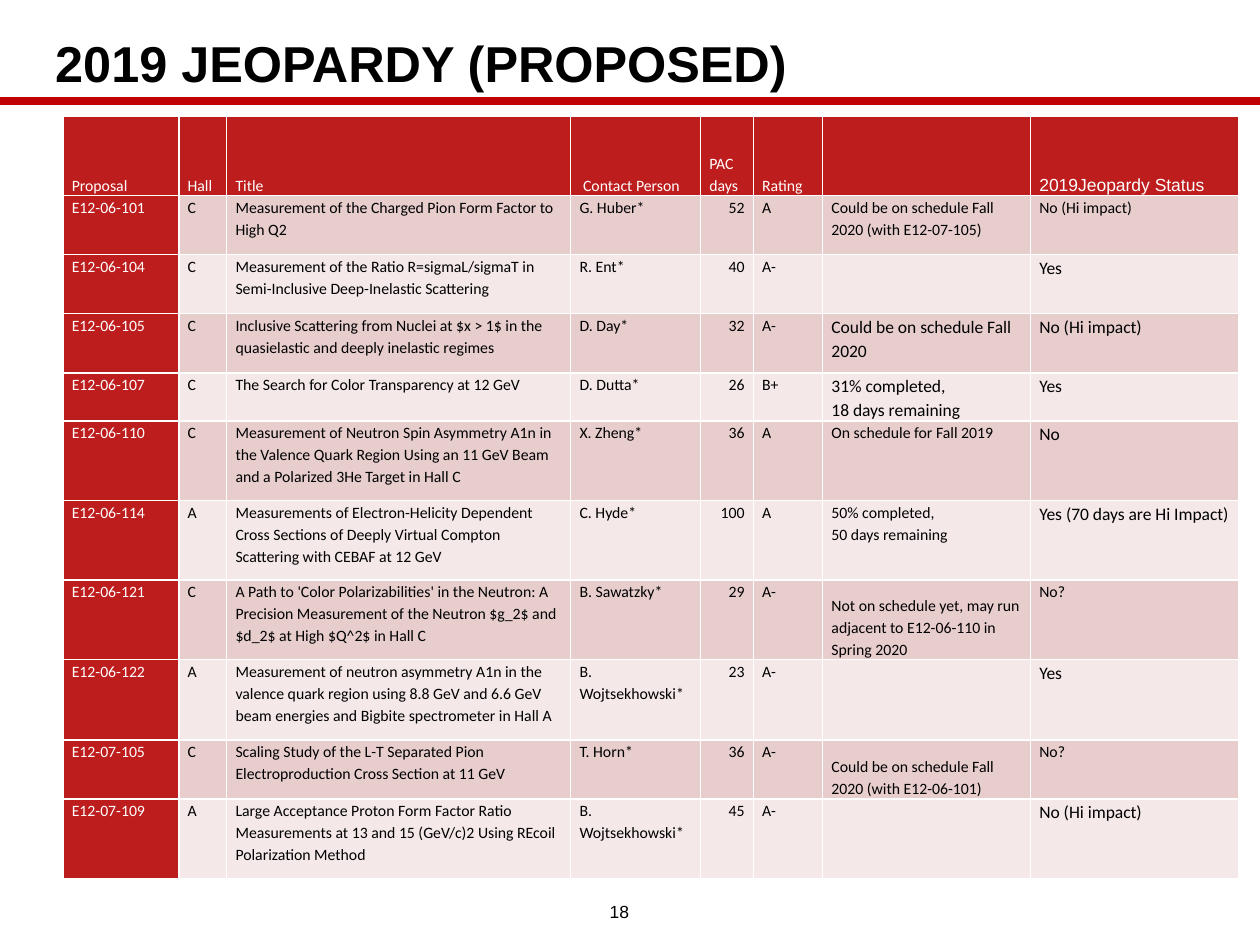
"""Build the 2019 jeopardy proposals table slide."""
from lxml import etree
from pptx import Presentation
from pptx.dml.color import RGBColor
from pptx.enum.shapes import MSO_CONNECTOR
from pptx.enum.text import MSO_ANCHOR, PP_ALIGN
from pptx.oxml.ns import qn
from pptx.util import Inches, Pt

STRAIGHT = MSO_CONNECTOR.STRAIGHT
TOP, MIDDLE, BOTTOM = MSO_ANCHOR.TOP, MSO_ANCHOR.MIDDLE, MSO_ANCHOR.BOTTOM
LEFT, CENTER, RIGHT = PP_ALIGN.LEFT, PP_ALIGN.CENTER, PP_ALIGN.RIGHT

BLACK = RGBColor(0x00, 0x00, 0x00)
WHITE = RGBColor(0xFF, 0xFF, 0xFF)
RULE_RED = RGBColor(0xC0, 0x00, 0x00)
HEADER_RED = RGBColor(0xBE, 0x1D, 0x1D)
BAND_DARK = RGBColor(0xE8, 0xCD, 0xCD)
BAND_LIGHT = RGBColor(0xF4, 0xE8, 0xE8)

TITLE = "2019 JEOPARDY (PROPOSED)"
PAGE_NUMBER = "18"
ROWS = [
    ("Proposal", "Hall", "Title", " Contact Person", "PAC days", "Rating", "",
     "2019Jeopardy Status"),
    ("E12-06-101", "C", "Measurement of the Charged Pion Form Factor to High Q2",
     "G. Huber*", "52", "A", "Could be on schedule Fall 2020 (with E12-07-105)",
     "No (Hi impact)"),
    ("E12-06-104", "C",
     "Measurement of the Ratio R=sigmaL/sigmaT in Semi-Inclusive Deep-Inelastic Scattering",
     "R. Ent*", "40", "A-", "", "Yes"),
    ("E12-06-105", "C",
     "Inclusive Scattering from Nuclei at $x > 1$ in the quasielastic and deeply "
     "inelastic regimes",
     "D. Day*", "32", "A-", "Could be on schedule Fall 2020", "No (Hi impact)"),
    ("E12-06-107", "C", "The Search for Color Transparency at 12 GeV",
     "D. Dutta*", "26", "B+", "31% completed,\n18 days remaining", "Yes"),
    ("E12-06-110", "C",
     "Measurement of Neutron Spin Asymmetry A1n in the Valence Quark Region Using "
     "an 11 GeV Beam and a Polarized 3He Target in Hall C",
     "X. Zheng*", "36", "A", "On schedule for Fall 2019", "No"),
    ("E12-06-114", "A",
     "Measurements of Electron-Helicity Dependent Cross Sections of Deeply Virtual "
     "Compton Scattering with CEBAF at 12 GeV",
     "C. Hyde*", "100", "A", "50% completed,\n50 days remaining",
     "Yes (70 days are Hi Impact)"),
    ("E12-06-121", "C",
     "A Path to 'Color Polarizabilities' in the Neutron: A Precision Measurement of "
     "the Neutron $g_2$ and $d_2$ at High $Q^2$ in Hall C",
     "B. Sawatzky*", "29", "A-",
     "Not on schedule yet, may run adjacent to E12-06-110 in Spring 2020", "No?"),
    ("E12-06-122", "A",
     "Measurement of neutron asymmetry A1n in the valence quark region using 8.8 GeV "
     "and 6.6 GeV beam energies and Bigbite spectrometer in Hall A",
     "B. Wojtsekhowski*", "23", "A-", "", "Yes"),
    ("E12-07-105", "C",
     "Scaling Study of the L-T Separated Pion Electroproduction Cross Section at 11 GeV",
     "T. Horn*", "36", "A-", "Could be on schedule Fall 2020 (with E12-06-101)", "No?"),
    ("E12-07-109", "A",
     "Large Acceptance Proton Form Factor Ratio Measurements at 13 and 15 (GeV/c)2 "
     "Using REcoil Polarization Method",
     "B. Wojtsekhowski*", "45", "A-", "", "No (Hi impact)"),
]
COLUMN_WIDTHS = (0.92, 0.38, 2.73, 1.03, 0.42, 0.55, 1.65, 1.65)
ROW_HEIGHTS = (0.63, 0.47, 0.47, 0.47, 0.35, 0.63, 0.63, 0.63, 0.64, 0.47, 0.63)
DAYS_COLUMN, SCHEDULE_COLUMN, STATUS_COLUMN = 4, 6, 7
LARGE_SCHEDULE_ROWS = (3, 4)
SMALL_STATUS_ROWS = (1, 7, 9)
BOTTOM_SCHEDULE_ROWS = (4, 7, 9)


def format_text(text_frame, size, color, font="Arial", bold=False, align=LEFT, spacing=None):
    for paragraph in text_frame.paragraphs:
        paragraph.alignment = align
        paragraph.line_spacing = spacing
        for run in paragraph.runs:
            run.font.name = font
            run.font.size = Pt(size)
            run.font.bold = bold
            run.font.color.rgb = color


def add_text(slide, text, left, top, width, height, **style):
    text_frame = slide.shapes.add_textbox(
        Inches(left), Inches(top), Inches(width), Inches(height)).text_frame
    text_frame.word_wrap = True
    text_frame.vertical_anchor = MIDDLE
    text_frame.text = text
    format_text(text_frame, color=BLACK, **style)


def add_rule(slide):
    rule = slide.shapes.add_connector(STRAIGHT, Inches(0), Inches(0.8), Inches(10), Inches(0.8))
    rule.line.color.rgb = RULE_RED
    rule.line.width = Pt(4.5)
    etree.SubElement(rule.element.spPr, qn("a:effectLst"))


def fill_cell(cell, text, row, column):
    is_header = row == 0
    is_red = is_header or column == 0
    is_large = (column == STATUS_COLUMN and row not in SMALL_STATUS_ROWS
                or column == SCHEDULE_COLUMN and row in LARGE_SCHEDULE_ROWS)
    at_bottom = is_header or column == SCHEDULE_COLUMN and row in BOTTOM_SCHEDULE_ROWS
    cell.margin_left = cell.margin_right = Inches(0.07)
    cell.margin_top = cell.margin_bottom = 0
    cell.vertical_anchor = BOTTOM if at_bottom else TOP
    cell.fill.solid()
    cell.fill.fore_color.rgb = HEADER_RED if is_red else BAND_DARK if row % 2 else BAND_LIGHT
    cell.text_frame.text = text
    format_text(
        cell.text_frame,
        size=10 if is_large else 9,
        color=WHITE if is_red else BLACK,
        font="Arial" if is_header and column == STATUS_COLUMN else "Calibri",
        align=RIGHT if column == DAYS_COLUMN and not is_header else LEFT,
        spacing=1.15)


def add_proposal_table(slide):
    table = slide.shapes.add_table(
        len(ROWS), len(COLUMN_WIDTHS), Inches(0.5), Inches(0.92),
        Inches(sum(COLUMN_WIDTHS)), Inches(sum(ROW_HEIGHTS))).table
    table.first_col = True
    for column, width in zip(table.columns, COLUMN_WIDTHS):
        column.width = Inches(width)
    for row, height in zip(table.rows, ROW_HEIGHTS):
        row.height = Inches(height)
    for row_index, texts in enumerate(ROWS):
        for column_index, text in enumerate(texts):
            fill_cell(table.cell(row_index, column_index), text, row_index, column_index)


def main():
    presentation = Presentation()
    presentation.slide_width, presentation.slide_height = Inches(10), Inches(7.5)
    slide = presentation.slides.add_slide(presentation.slide_layouts[6])
    add_rule(slide)
    add_text(slide, TITLE, 0.34, 0.26, 9.26, 0.53, size=28.8, bold=True, spacing=0.9)
    add_proposal_table(slide)
    add_text(slide, PAGE_NUMBER, 4.62, 7.07, 0.59, 0.33, size=10, align=CENTER)
    presentation.save("out.pptx")


if __name__ == "__main__":
    main()
